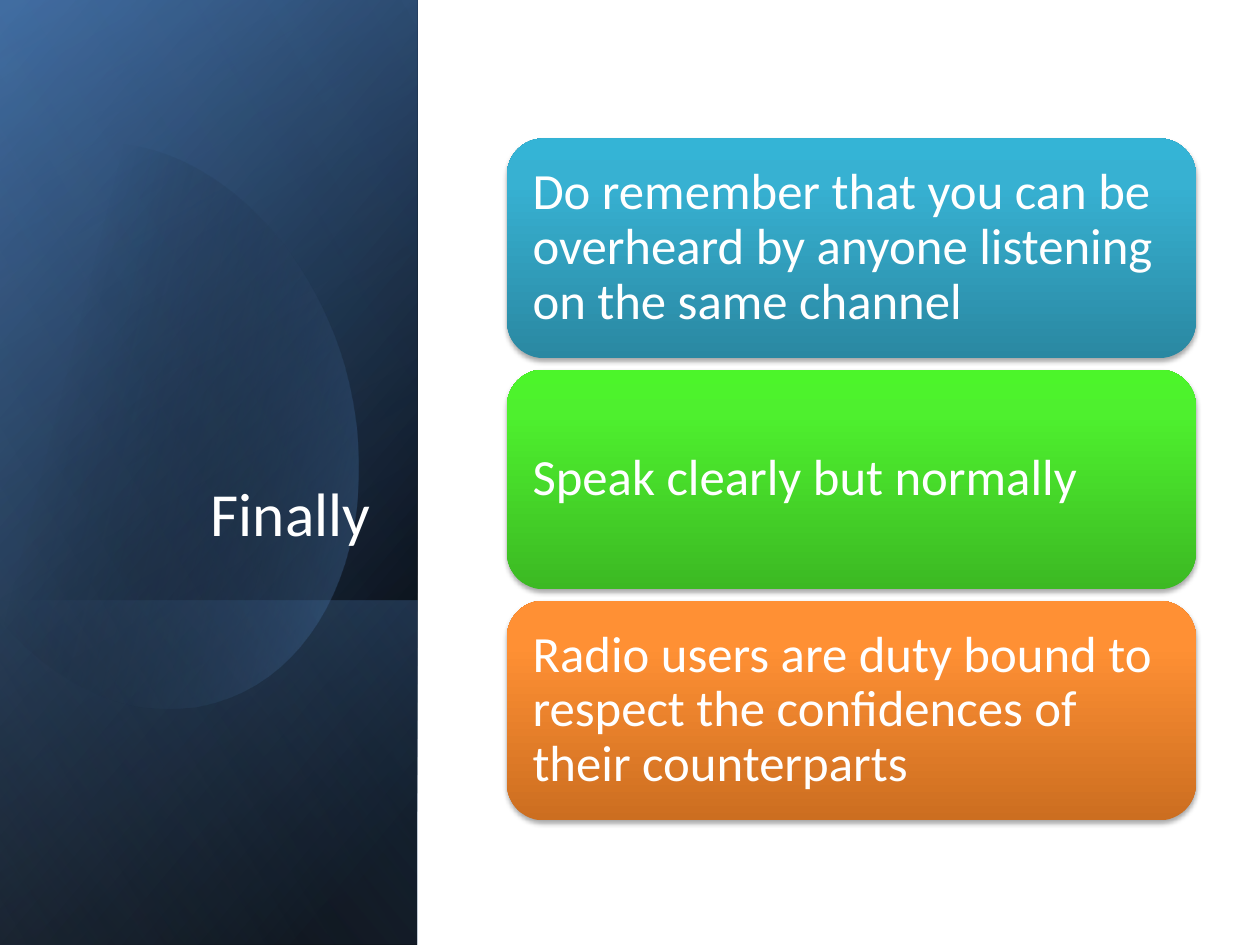
"""Build a closing slide with a layered dark title panel and three advice cards."""
from lxml.etree import SubElement
from pptx import Presentation
from pptx.dml.color import RGBColor
from pptx.enum.shapes import MSO_SHAPE
from pptx.enum.text import MSO_ANCHOR, PP_ALIGN
from pptx.oxml.ns import qn
from pptx.util import Cm, Pt

COLOURS = {
    "white": "FFFFFF", "black": "000000", "navy": "376092", "blue": "4F81BD", "pale": "95B3D7",
    "teal_dark": "2A88A2", "teal": "37B1D2", "teal_light": "34B4D6",
    "green_dark": "3CB923", "green": "4EF02E", "green_light": "4CF52A",
    "orange_dark": "CC6E20", "orange": "FF9034", "orange_light": "FF9136",
}
FONT = "Calibri"
TITLE = "Finally"
CARDS = [
    ("Do remember that you can be overheard by anyone listening on the same channel", "teal"),
    ("Speak clearly but normally", "green"),
    ("Radio users are duty bound to respect the confidences of their counterparts", "orange"),
]
SLIDE_WIDTH, SLIDE_HEIGHT = 25.4, 19.05
PANEL_WIDTH = 8.41
FOOT_TOP, FOOT_HEIGHT = 12.1, 6.95
LOWER_LAYERS = [
    (0, SLIDE_HEIGHT, 50, [(8, "black", 100), (100, "navy", 100)]),
    (0, SLIDE_HEIGHT, 30, [(0, "black", 0), (99, "blue", 46)]),
    (FOOT_TOP, FOOT_HEIGHT, 130, [(2, "blue", 29), (100, "black", 30)]),
]
UPPER_LAYER = (0, SLIDE_HEIGHT, 120, [(0, "black", 0), (99, "pale", 11)])
OVAL_ANGLE, OVAL_STOPS = 14, [(29, "black", 0), (100, "blue", 43)]
OVAL_START = (2.44, 2.9)
OVAL_SEGMENTS = [
    [(4.34, 3.1), (6.2, 4.88), (6.93, 7.37)],
    [(7.8, 10.46), (6.65, 13.49), (4.34, 14.15)],
    [(2.9, 14.58), (1.35, 13.97), (0.18, 12.7)],
    [(-0.08, 12.4)],
    [(-0.64, 4.22)],
    [(-0.38, 3.91)],
    [(0.05, 3.48), (0.56, 3.18), (1.14, 3.0)],
    [(1.57, 2.87), (2.01, 2.84), (2.44, 2.9)],
]
CURVE_STEPS = 24
CARD_LEFT, CARD_TOP, CARD_WIDTH, CARD_HEIGHT, CARD_PITCH = 10.22, 2.79, 13.89, 4.43, 4.66


def add_colour(parent, name, opacity):
    colour = SubElement(parent, qn("a:srgbClr"), val=COLOURS[name])
    if opacity < 100:
        SubElement(colour, qn("a:alpha"), val=str(opacity * 1000))


def paint(shape, stops, angle):
    shape.shadow.inherit = False
    shape.line.fill.background()
    shape.fill.background()
    properties = shape._element.spPr
    gradient = SubElement(properties, qn("a:gradFill"), rotWithShape="1")
    properties.replace(properties.find(qn("a:noFill")), gradient)
    stop_list = SubElement(gradient, qn("a:gsLst"))
    for position, name, opacity in stops:
        add_colour(SubElement(stop_list, qn("a:gs"), pos=str(position * 1000)), name, opacity)
    SubElement(gradient, qn("a:lin"), ang=str(angle * 60000), scaled="0")


def add_shadow(shape):
    effects = shape._element.spPr.find(qn("a:effectLst"))
    shadow = SubElement(effects, qn("a:outerShdw"), blurRad=str(Pt(3.1)), dist=str(Pt(1.8)),
                        dir="5400000", rotWithShape="0")
    add_colour(shadow, "black", 35)


def add_layer(page, top, height, angle, stops):
    left = (PANEL_WIDTH - height) / 2
    turned_top = top + (height - PANEL_WIDTH) / 2
    layer = page.shapes.add_shape(MSO_SHAPE.RECTANGLE, Cm(left), Cm(turned_top), Cm(height), Cm(PANEL_WIDTH))
    layer.rotation = 90
    paint(layer, stops, angle)
    layer._element.spPr.xfrm.set("flipH", "1")


def curve_points(start, first, second, end):
    for step in range(1, CURVE_STEPS + 1):
        t = step / CURVE_STEPS
        weights = ((1 - t) ** 3, 3 * t * (1 - t) ** 2, 3 * t * t * (1 - t), t ** 3)
        yield tuple(sum(w * p[axis] for w, p in zip(weights, (start, first, second, end))) for axis in (0, 1))


def add_oval(page):
    points, current = [], OVAL_START
    for segment in OVAL_SEGMENTS:
        points += curve_points(current, *segment) if len(segment) == 3 else segment
        current = segment[-1]
    builder = page.shapes.build_freeform(Cm(OVAL_START[0]), Cm(OVAL_START[1]))
    builder.add_line_segments([(Cm(x), Cm(y)) for x, y in points], close=True)
    paint(builder.convert_to_shape(), OVAL_STOPS, OVAL_ANGLE)


def write(box, text, size, align=PP_ALIGN.LEFT, anchor=MSO_ANCHOR.MIDDLE, inset=0.3, spacing=1.0):
    frame = box.text_frame
    frame.word_wrap = True
    frame.vertical_anchor = anchor
    frame.margin_left = frame.margin_right = frame.margin_top = frame.margin_bottom = Cm(inset)
    para = frame.paragraphs[0]
    para.alignment, para.line_spacing = align, spacing
    span = para.add_run()
    span.text = text
    span.font.name, span.font.size = FONT, Pt(size)
    span.font.color.rgb = RGBColor.from_string(COLOURS["white"])


def add_card(page, index, text, tone):
    top = CARD_TOP + index * CARD_PITCH
    card = page.shapes.add_shape(MSO_SHAPE.ROUNDED_RECTANGLE, Cm(CARD_LEFT), Cm(top), Cm(CARD_WIDTH), Cm(CARD_HEIGHT))
    paint(card, [(0, f"{tone}_dark", 100), (80, tone, 100), (100, f"{tone}_light", 100)], 270)
    add_shadow(card)
    write(card, text, 29, spacing=0.9)


def main():
    deck = Presentation()
    deck.slide_width, deck.slide_height = Cm(SLIDE_WIDTH), Cm(SLIDE_HEIGHT)
    page = deck.slides.add_slide(deck.slide_layouts[6])
    for layer in LOWER_LAYERS:
        add_layer(page, *layer)
    add_oval(page)
    add_layer(page, *UPPER_LAYER)
    title = page.shapes.add_textbox(Cm(1.22), Cm(4.67), Cm(6.5), Cm(6.65))
    write(title, TITLE, 35, align=PP_ALIGN.RIGHT, anchor=MSO_ANCHOR.BOTTOM, inset=0.25)
    for index, (text, tone) in enumerate(CARDS):
        add_card(page, index, text, tone)
    deck.save("out.pptx")


if __name__ == "__main__":
    main()
